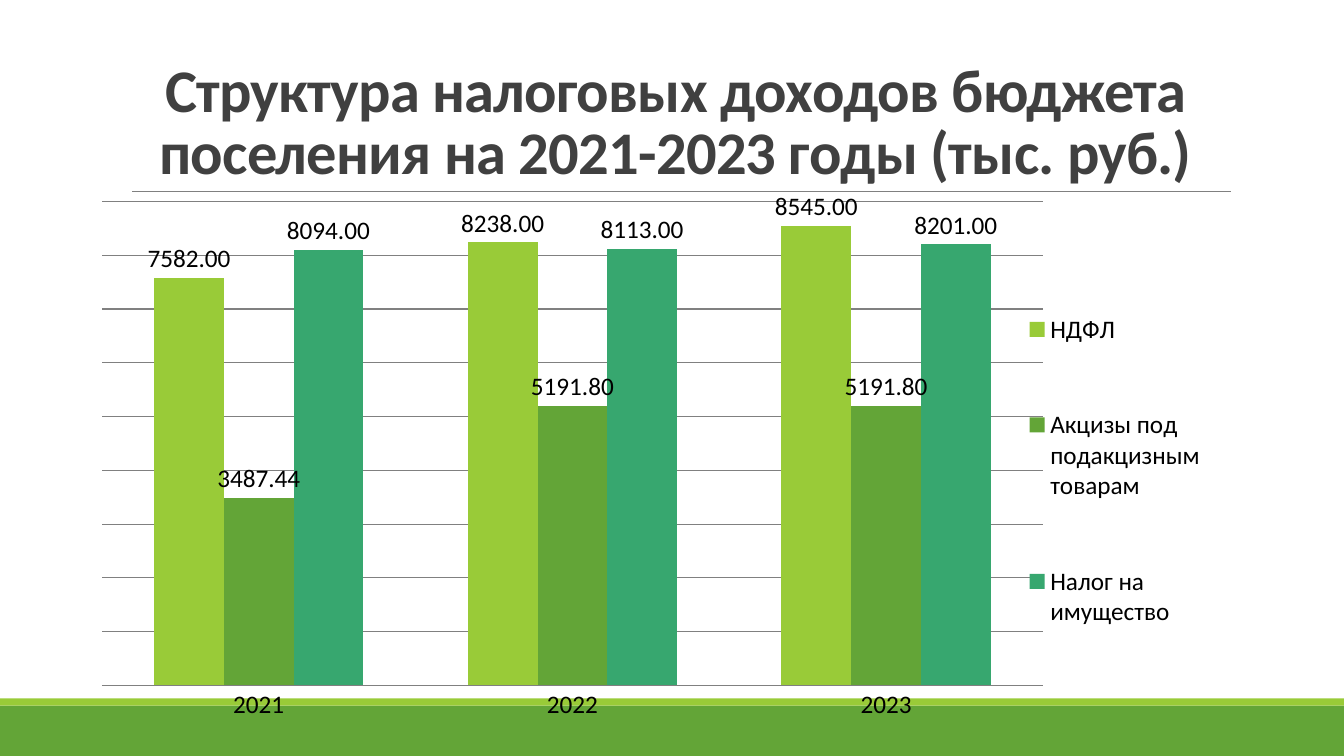
"""Build a slide with a clustered column chart of tax revenues by year."""
from lxml import etree
from pptx import Presentation
from pptx.chart.data import CategoryChartData
from pptx.dml.color import RGBColor
from pptx.enum.chart import XL_CHART_TYPE, XL_LABEL_POSITION, XL_LEGEND_POSITION, XL_TICK_MARK
from pptx.enum.shapes import MSO_CONNECTOR, MSO_SHAPE
from pptx.enum.text import MSO_ANCHOR, MSO_AUTO_SIZE, PP_ALIGN
from pptx.oxml.ns import qn
from pptx.util import Inches, Pt

TITLE = "Структура налоговых доходов бюджета поселения на 2021-2023 годы (тыс. руб.)"
YEARS = ["2021", "2022", "2023"]
SERIES = [
    ("НДФЛ", "lime", (7582, 8238, 8545)),
    ("Акцизы под подакцизным товарам", "green", (3487.44, 5191.8, 5191.8)),
    ("Налог на имущество", "teal", (8094, 8113, 8201)),
]
COLORS = {"lime": "99CB38", "green": "63A537", "teal": "37A76F",
          "gray": "808080", "title": "404040", "text": "000000"}
FONT = "Calibri"
WIDTH, HEIGHT = 13.33, 7.5
BANDS = [("green", 7, 0.5), ("lime", 6.93, 0.07)]
TITLE_BOX = (1.2, 0.31, 11, 1.59)
RULE = (1.31, 1.9, 12.21, 1.9)
CHART_BOX = (0.25, 0.84, 12.28, 6.66)
PLOT_SHARE = (0.062, 0.174, 0.76, 0.721)
LEGEND_SHARE = (0.8, 0.245, 0.16, 0.66)


def rgb(name):
    return RGBColor.from_string(COLORS[name])


def inches(box):
    return [Inches(v) for v in box]


def style_font(font, size, color, bold=False):
    font.name, font.size, font.bold = FONT, Pt(size), bold
    font.color.rgb = rgb(color)


def write_text(shape, text, size, color, bold=False, line_spacing=1.0, tracking=0):
    tf = shape.text_frame
    tf.word_wrap = True
    tf.auto_size = MSO_AUTO_SIZE.NONE
    tf.vertical_anchor = MSO_ANCHOR.BOTTOM
    p = tf.paragraphs[0]
    p.alignment, p.line_spacing = PP_ALIGN.CENTER, line_spacing
    r = p.add_run()
    r.text = text
    style_font(r.font, size, color, bold)
    r.font._element.set("spc", str(int(tracking * 100)))


def set_layout(parent, index, shares, inner=False):
    for old in parent.findall(qn("c:layout")):
        parent.remove(old)
    layout = etree.Element(qn("c:layout"))
    manual = etree.SubElement(layout, qn("c:manualLayout"))
    items = [("layoutTarget", "inner")] if inner else []
    items += [("xMode", "edge"), ("yMode", "edge"), *zip("xywh", shares)]
    for tag, val in items:
        etree.SubElement(manual, qn(f"c:{tag}")).set("val", str(val))
    parent.insert(index, layout)


def add_bands(s):
    for color, top, height in BANDS:
        sp = s.shapes.add_shape(MSO_SHAPE.RECTANGLE, *inches((0, top, WIDTH, height)))
        sp.shadow.inherit = False
        sp.fill.solid()
        sp.fill.fore_color.rgb = rgb(color)
        sp.line.fill.background()


def add_rule(s):
    line = s.shapes.add_connector(MSO_CONNECTOR.STRAIGHT, *inches(RULE))
    line.line.color.rgb, line.line.width = rgb("gray"), Pt(0.5)
    etree.SubElement(line._element.spPr, qn("a:effectLst"))


def add_revenue_chart(s):
    data = CategoryChartData(number_format="0.00")
    data.categories = YEARS
    for name, _, values in SERIES:
        data.add_series(name, values)
    chart = s.shapes.add_chart(XL_CHART_TYPE.COLUMN_CLUSTERED, *inches(CHART_BOX), data).chart
    chart.has_title = False
    style_font(chart.font, 18, "text")

    plot = chart.plots[0]
    plot.gap_width, plot.overlap, plot.vary_by_categories = 150, 0, False
    for series, (_, color, _) in zip(plot.series, SERIES):
        series.format.fill.solid()
        series.format.fill.fore_color.rgb = rgb(color)
        labels = series.data_labels
        labels.show_value = True
        labels.number_format, labels.number_format_is_linked = "0.00", False
        labels.position = XL_LABEL_POSITION.OUTSIDE_END

    cat, val = chart.category_axis, chart.value_axis
    cat.major_tick_mark = cat.minor_tick_mark = XL_TICK_MARK.NONE
    val.minimum_scale, val.maximum_scale, val.major_unit = 0, 9000, 1000
    val.visible = False
    val.has_major_gridlines = True
    for line in (cat.format.line, val.major_gridlines.format.line):
        line.color.rgb, line.width = rgb("gray"), Pt(0.75)

    chart.has_legend = True
    legend = chart.legend
    legend.position, legend.include_in_layout = XL_LEGEND_POSITION.RIGHT, False
    set_layout(legend._element, 1, LEGEND_SHARE)
    set_layout(cat._element.getparent(), 0, PLOT_SHARE, inner=True)


def main():
    prs = Presentation()
    prs.slide_width, prs.slide_height = inches((WIDTH, HEIGHT))
    s = prs.slides.add_slide(prs.slide_layouts[5])
    title = s.shapes.title
    title.left, title.top, title.width, title.height = inches(TITLE_BOX)
    write_text(title, TITLE, 43.2, "title", bold=True, line_spacing=0.85, tracking=-0.5)
    add_bands(s)
    add_rule(s)
    add_revenue_chart(s)
    prs.save("out.pptx")


if __name__ == "__main__":
    main()
